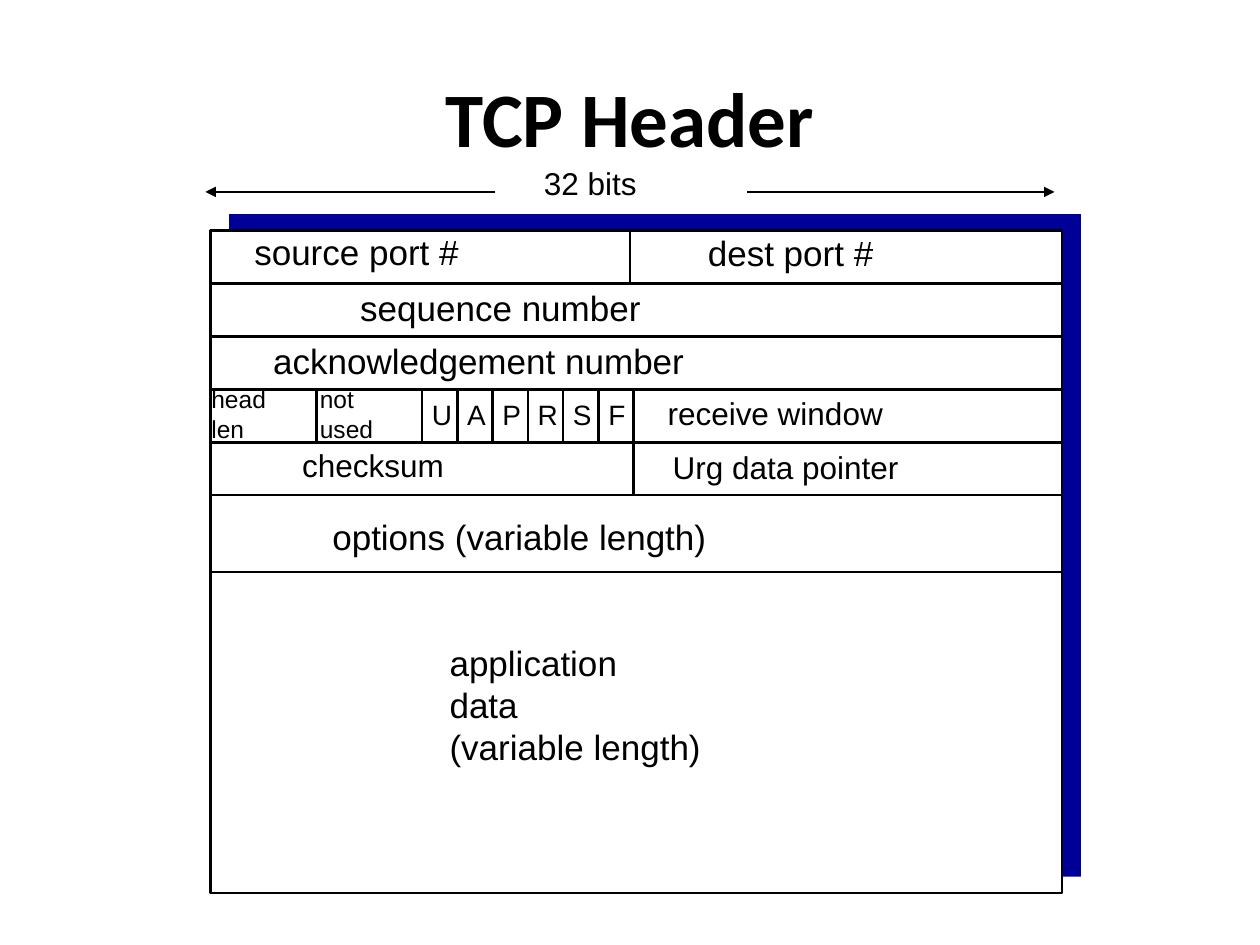
"""Build a slide that shows the layout of a TCP header as rows of 32 bits."""
from dataclasses import dataclass

from lxml.etree import SubElement
from pptx import Presentation
from pptx.dml.color import RGBColor
from pptx.enum.shapes import MSO_CONNECTOR, MSO_SHAPE
from pptx.enum.text import MSO_ANCHOR, PP_ALIGN
from pptx.oxml.ns import qn
from pptx.slide import Slide
from pptx.util import Inches, Pt

COLORS = {"ink": "000000", "paper": "FFFFFF", "shade": "000099"}
LEFT, TOP = 1.67, 1.83
BIT, ROW = 0.21, 0.42
BITS, ROWS = 32.19, 12.52
FLAG_BITS = 8 / 6


@dataclass(frozen=True)
class Field:
    text: str
    bit: float
    row: float
    bits: float
    size: int = 20


@dataclass(frozen=True)
class Rule:
    start_bit: float
    start_row: float
    end_bit: float
    end_row: float
    arrow: bool = False


FIELDS = [
    Field("32 bits", 12.14, -1.38, 7, 18),
    Field("source port #", 1.19, -0.12, 13.57),
    Field("dest port #", 18.33, -0.1, 11.24),
    Field("sequence number", 5.19, 0.93, 20.29),
    Field("acknowledgement number", 1.9, 1.95, 27.81),
    Field("head\nlen", -0.43, 2.79, 4.71, 14),
    Field("not\nused", 3.67, 2.79, 4.62, 14),
    *[Field(flag, 7.9 + i * FLAG_BITS, 3.03, 2.6, 16) for i, flag in enumerate("UAPRSF")],
    Field("receive window", 16.81, 2.98, 14.24, 18),
    Field("checksum", 3, 3.95, 9.9, 18),
    Field("Urg data pointer", 17, 4, 14.86, 18),
    Field("options (variable length)", 4.14, 5.26, 23.57),
    Field("application\ndata\n(variable length)", 8.57, 7.64, 16.33),
]

RULES = [
    *[Rule(0, row, BITS, row) for row in (1, 2, 3, 4, 5, 6.45)],
    Rule(15.86, 0, 15.86, 1),
    Rule(4, 3, 4, 4),
    *[Rule(8 + i * FLAG_BITS, 3, 8 + i * FLAG_BITS, 4) for i in range(6)],
    Rule(16, 3, 16, 5),
    Rule(10.76, -0.73, -0.19, -0.73, arrow=True),
    Rule(20.29, -0.73, 31.9, -0.73, arrow=True),
]


def color(name: str) -> RGBColor:
    """Return a named colour."""
    return RGBColor.from_string(COLORS[name])


def across(bit: float) -> int:
    """Return the horizontal place of a bit."""
    return Inches(LEFT + bit * BIT)


def down(row: float) -> int:
    """Return the vertical place of a row."""
    return Inches(TOP + row * ROW)


def draw_title(slide: Slide, text: str) -> None:
    """Fill and format the title placeholder."""
    title = slide.shapes.title
    title.left, title.top = Inches(0.5), Inches(0.3)
    title.width, title.height = Inches(9), Inches(1.25)
    title.text_frame.text = text
    title.text_frame.vertical_anchor = MSO_ANCHOR.MIDDLE
    heading = title.text_frame.paragraphs[0]
    heading.alignment = PP_ALIGN.CENTER
    heading.font.name, heading.font.size, heading.font.bold = "Calibri", Pt(44), True
    heading.font.color.rgb = color("ink")


def draw_panel(slide: Slide, bit: float, row: float, fill: str, outlined: bool) -> None:
    """Draw a rectangle as large as the header."""
    panel = slide.shapes.add_shape(
        MSO_SHAPE.RECTANGLE, across(bit), down(row), Inches(BITS * BIT), Inches(ROWS * ROW))
    panel.shadow.inherit = False
    panel.fill.solid()
    panel.fill.fore_color.rgb = color(fill)
    if outlined:
        panel.line.color.rgb = color("ink")
        panel.line.width = Pt(1.5)
    else:
        panel.line.fill.background()


def draw_rule(slide: Slide, rule: Rule) -> None:
    """Draw a dividing line or an arrow."""
    line = slide.shapes.add_connector(
        MSO_CONNECTOR.STRAIGHT, across(rule.start_bit), down(rule.start_row),
        across(rule.end_bit), down(rule.end_row))
    line.line.color.rgb = color("ink")
    line.line.width = Pt(1.5)
    if rule.arrow:
        SubElement(line.line._get_or_add_ln(), qn("a:tailEnd"), type="triangle")
    SubElement(line._element.spPr, qn("a:effectLst"))


def draw_field(slide: Slide, field: Field) -> None:
    """Write the label of a field, one paragraph a line."""
    lines = field.text.count("\n") + 1
    label = slide.shapes.add_textbox(
        across(field.bit), down(field.row), Inches(field.bits * BIT),
        Inches(0.1 + lines * field.size / 60))
    label.text_frame.word_wrap = True
    label.text_frame.text = field.text
    for paragraph in label.text_frame.paragraphs:
        paragraph.font.name, paragraph.font.size = "Arial", Pt(field.size)
        paragraph.font.color.rgb = color("ink")


def main() -> None:
    """Build and save the presentation."""
    deck = Presentation()
    deck.slide_width, deck.slide_height = Inches(10), Inches(7.5)
    slide = deck.slides.add_slide(deck.slide_layouts[5])
    draw_title(slide, "TCP Header")
    draw_panel(slide, 0.71, -0.31, "shade", outlined=False)
    draw_panel(slide, 0, 0, "paper", outlined=True)
    for rule in RULES:
        draw_rule(slide, rule)
    for field in FIELDS:
        draw_field(slide, field)
    deck.save("out.pptx")


if __name__ == "__main__":
    main()
